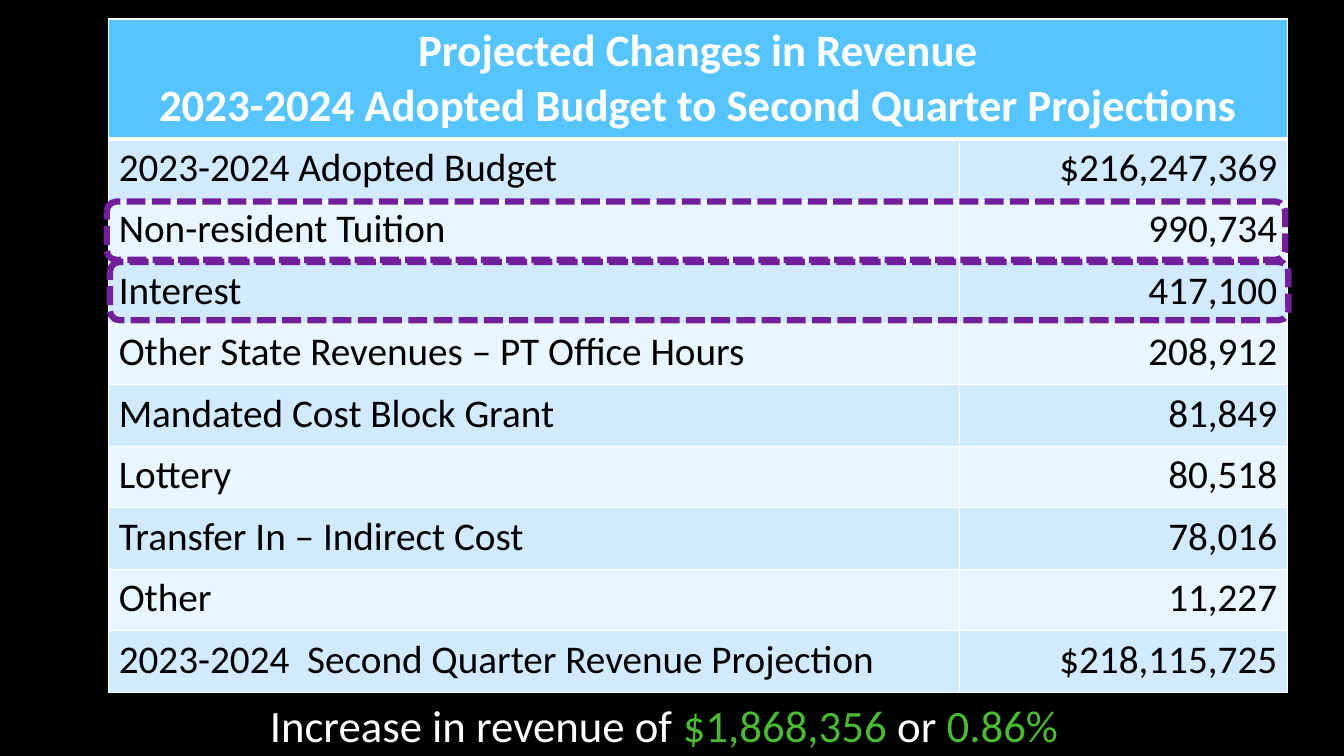
from pptx import Presentation
from pptx.dml.color import RGBColor
from pptx.enum.dml import MSO_LINE_DASH_STYLE as Dash
from pptx.enum.shapes import MSO_SHAPE as Shape
from pptx.enum.text import MSO_ANCHOR as Anchor, MSO_AUTO_SIZE as AutoSize, PP_ALIGN as Align
from pptx.oxml import parse_xml
from pptx.oxml.ns import nsdecls
from pptx.util import Cm, Pt

COLORS = {
    "background": "000000",
    "header": "56C5FF",
    "odd_row": "D1EAFF",
    "even_row": "E9F5FF",
    "light": "FFFFFF",
    "dark": "000000",
    "increase": "4BB836",
    "highlight": "71209A",
}

HEADING = "Projected Changes in Revenue\n2023-2024 Adopted Budget to Second Quarter Projections"
REVENUES = [
    ("2023-2024 Adopted Budget", "$216,247,369"),
    ("Non-resident Tuition", "990,734"),
    ("Interest", "417,100"),
    ("Other State Revenues – PT Office Hours", "208,912"),
    ("Mandated Cost Block Grant", "81,849"),
    ("Lottery", "80,518"),
    ("Transfer In – Indirect Cost", "78,016"),
    ("Other", "11,227"),
    ("2023-2024  Second Quarter Revenue Projection", "$218,115,725"),
]
SUMMARY = [
    ("Increase in revenue of ", "light"),
    ("$1,868,356", "increase"),
    (" or ", "light"),
    ("0.86%", "increase"),
]
COLUMN_WIDTHS = (21.44, 8.26)
HEADER_HEIGHT, ROW_HEIGHT = 2.69, 1.55


def rgb(name):
    return RGBColor.from_string(COLORS[name])


class RevenueSlide:
    font_name = "Calibri"
    large, medium = Pt(32), Pt(28)

    def __init__(self, presentation):
        self.slide = presentation.slides.add_slide(presentation.slide_layouts[6])
        backdrop = self.slide.background.fill
        backdrop.solid()
        backdrop.fore_color.rgb = rgb("background")

    def style_font(self, font, size, color, bold=False):
        font.name, font.size, font.bold = self.font_name, size, bold
        font.color.rgb = rgb(color)

    def border_cell(self, cell, top=1, bottom=1):
        """Draw light borders; top and bottom are widths in points."""
        properties = cell._tc.get_or_add_tcPr()
        for side, points in (("L", 1), ("R", 1), ("T", top), ("B", bottom)):
            properties.append(parse_xml(
                f'<a:ln{side} {nsdecls("a")} w="{Pt(points)}"><a:solidFill>'
                f'<a:srgbClr val="{COLORS["light"]}"/></a:solidFill></a:ln{side}>'))

    def fill_cell(self, cell, text, fill, size, color, align, bold=False):
        cell.fill.solid()
        cell.fill.fore_color.rgb = rgb(fill)
        cell.text = text
        for paragraph in cell.text_frame.paragraphs:
            paragraph.alignment = align
            self.style_font(paragraph.font, size, color, bold)

    def add_revenue_table(self, left, top):
        height = HEADER_HEIGHT + ROW_HEIGHT * len(REVENUES)
        table = self.slide.shapes.add_table(
            len(REVENUES) + 1, len(COLUMN_WIDTHS),
            Cm(left), Cm(top), Cm(sum(COLUMN_WIDTHS)), Cm(height)).table
        for column, width in zip(table.columns, COLUMN_WIDTHS):
            column.width = Cm(width)
        for index, row in enumerate(table.rows):
            row.height = Cm(ROW_HEIGHT if index else HEADER_HEIGHT)
            for cell in row.cells:
                self.border_cell(cell, top=3 if index == 1 else 1, bottom=1 if index else 3)

        heading = table.cell(0, 0)
        heading.merge(table.cell(0, 1))
        self.fill_cell(heading, HEADING, "header", self.large, "light", Align.CENTER, bold=True)
        for index, revenue in enumerate(REVENUES, start=1):
            band = "odd_row" if index % 2 else "even_row"
            for column, (text, align) in enumerate(zip(revenue, (Align.LEFT, Align.RIGHT))):
                self.fill_cell(table.cell(index, column), text, band, self.medium, "dark", align)

    def add_summary(self, left, top, width, height):
        frame = self.slide.shapes.add_textbox(Cm(left), Cm(top), Cm(width), Cm(height)).text_frame
        frame.word_wrap = True
        frame.auto_size = AutoSize.SHAPE_TO_FIT_TEXT
        frame.vertical_anchor = Anchor.TOP
        for text, color in SUMMARY:
            run = frame.paragraphs[0].add_run()
            run.text = text
            self.style_font(run.font, self.large, color)

    def add_highlight(self, left, top, width, height):
        outline = self.slide.shapes.add_shape(
            Shape.ROUNDED_RECTANGLE, Cm(left), Cm(top), Cm(width), Cm(height))
        outline.shadow.inherit = False
        outline.fill.background()
        outline.line.color.rgb = rgb("highlight")
        outline.line.width = Pt(4.5)
        outline.line.dash_style = Dash.SQUARE_DOT


def main():
    presentation = Presentation()
    presentation.slide_width, presentation.slide_height = Cm(33.87), Cm(19.05)
    revenue_slide = RevenueSlide(presentation)
    revenue_slide.add_revenue_table(2.74, 0.48)
    revenue_slide.add_summary(6.55, 17.45, 23.06, 1.62)
    for left, top in ((2.69, 5.08), (2.77, 6.6)):
        revenue_slide.add_highlight(left, top, sum(COLUMN_WIDTHS), 1.47)
    presentation.save("out.pptx")


if __name__ == "__main__":
    main()
